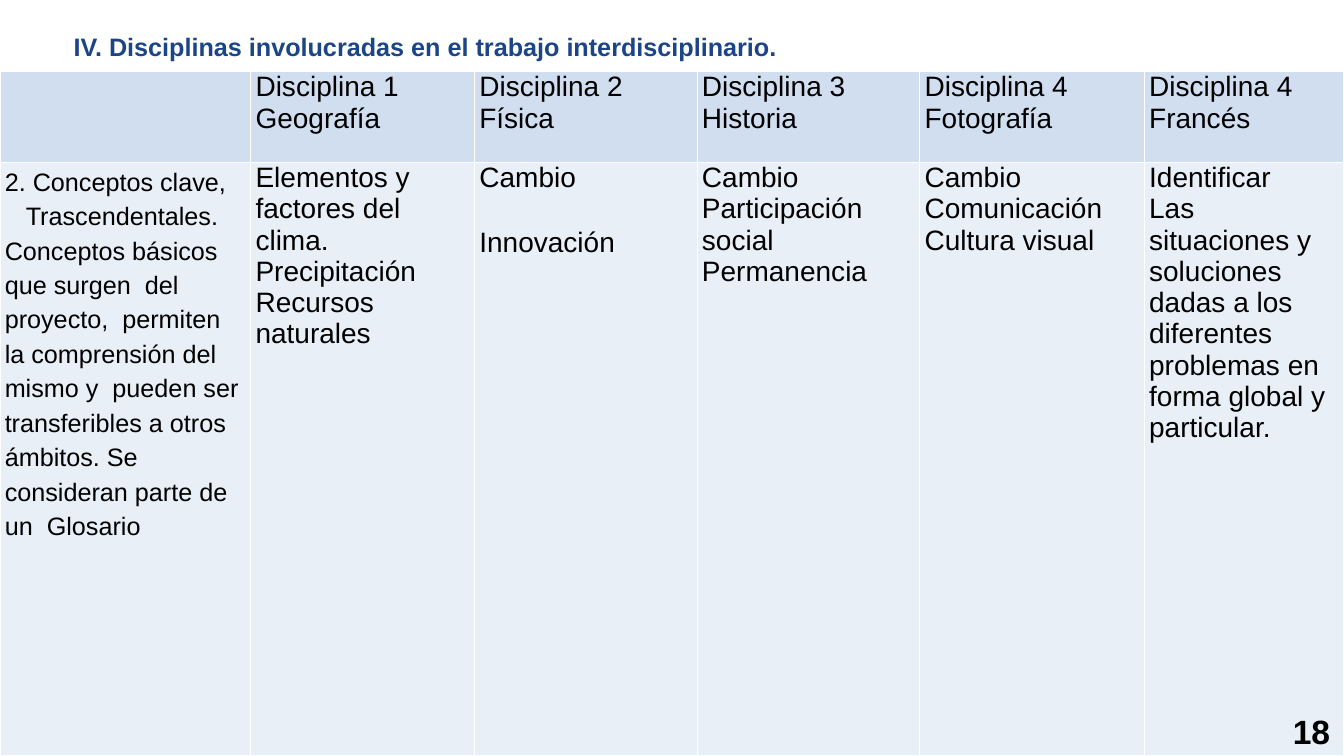
"""Build the slide on the disciplines involved in the interdisciplinary work."""
from dataclasses import dataclass

from lxml import etree
from pptx import Presentation
from pptx import util as u
from pptx.dml.color import RGBColor
from pptx.enum import text
from pptx.oxml import ns

COLORS = {"heading": "1C4587", "ink": "000000", "header": "D0DEEF",
          "body": "E9EFF7", "border": "FFFFFF"}
FONT = "Arial"
COLUMN_WIDTHS = (6.32, 5.64, 5.61, 5.61, 5.66, 5.03)
ROW_HEIGHTS = (2.29, 14.96)


@dataclass(frozen=True)
class Entry:
    """One paragraph of a table cell."""
    words: str
    size: float = 20
    line_spacing: float = 1.0
    before: float = 0
    indent: float = 0


@dataclass(frozen=True)
class Discipline:
    """A discipline with its heading and its key concepts."""
    heading: str
    concepts: tuple[Entry, ...]


KEY_CONCEPTS = (
    Entry("2. Conceptos clave,", 18, 1.22),
    Entry("Trascendentales.", 18, 1.22, indent=0.53),
    Entry("Conceptos básicos que surgen  del proyecto,  permiten la comprensión "
          "del mismo y  pueden ser transferibles a otros ámbitos. Se consideran "
          "parte de un  Glosario", 18, 1.22),
)
DISCIPLINES = (
    Discipline("Disciplina 1 Geografía", (
        Entry("Elementos y factores del clima."), Entry("Precipitación"),
        Entry("Recursos naturales"))),
    Discipline("Disciplina 2 Física", (
        Entry("Cambio"), Entry("Innovación", before=24))),
    Discipline("Disciplina 3 Historia", (
        Entry("Cambio"), Entry("Participación social"), Entry("Permanencia"))),
    Discipline("Disciplina 4 Fotografía", (
        Entry("Cambio"), Entry("Comunicación"), Entry("Cultura visual"))),
    Discipline("Disciplina 4 Francés", (
        Entry("Identificar"),
        Entry("Las situaciones y soluciones dadas a los diferentes problemas "
              "en forma global y particular."))),
)


def style_font(font, size: float, color: str, bold: bool = False) -> None:
    """Apply the slide's typeface with a size, colour and weight."""
    font.name, font.size, font.bold = FONT, u.Pt(size), bold
    font.color.rgb = RGBColor.from_string(COLORS[color])


def write_label(shape, words: str, size: float, color: str,
                box: tuple[float, float, float, float]) -> None:
    """Place a one-line bold label in a shape."""
    shape.left, shape.top, shape.width, shape.height = map(u.Cm, box)
    frame = shape.text_frame
    frame.text = words
    frame.word_wrap = True
    frame.auto_size = text.MSO_AUTO_SIZE.NONE
    paragraph = frame.paragraphs[0]
    paragraph.alignment = text.PP_ALIGN.LEFT
    style_font(paragraph.runs[0].font, size, color, bold=True)


def draw_borders(cell) -> None:
    """Give a cell a thin border on all four sides."""
    properties = cell._tc.get_or_add_tcPr()
    for side in ("lnL", "lnR", "lnT", "lnB"):
        line = etree.SubElement(properties, ns.qn(f"a:{side}"), w=str(u.Pt(1)))
        fill = etree.SubElement(line, ns.qn("a:solidFill"))
        etree.SubElement(fill, ns.qn("a:srgbClr"), val=COLORS["border"])


def fill_cell(cell, entries: tuple[Entry, ...], color: str) -> None:
    """Write the entries into a cell and colour it."""
    draw_borders(cell)
    cell.fill.solid()
    cell.fill.fore_color.rgb = RGBColor.from_string(COLORS[color])
    cell.margin_left = cell.margin_right = u.Cm(0.12)
    cell.margin_top = cell.margin_bottom = 0
    cell.text_frame.text = "\n".join(entry.words for entry in entries)
    for paragraph, entry in zip(cell.text_frame.paragraphs, entries):
        paragraph.line_spacing = entry.line_spacing
        paragraph.space_before = u.Pt(entry.before)
        if entry.indent:
            paragraph._p.get_or_add_pPr().set("marL", str(u.Cm(entry.indent)))
        for run in paragraph.runs:
            style_font(run.font, entry.size, "ink")


def add_disciplines(slide) -> None:
    """Add the table of disciplines and their concepts."""
    grid = slide.shapes.add_table(
        len(ROW_HEIGHTS), len(COLUMN_WIDTHS), 0, u.Cm(1.8),
        u.Cm(sum(COLUMN_WIDTHS)), u.Cm(sum(ROW_HEIGHTS))).table
    grid.first_row = grid.horz_banding = False
    for column, width in zip(grid.columns, COLUMN_WIDTHS):
        column.width = u.Cm(width)
    for row, height in zip(grid.rows, ROW_HEIGHTS):
        row.height = u.Cm(height)
    fill_cell(grid.cell(0, 0), (), "header")
    fill_cell(grid.cell(1, 0), KEY_CONCEPTS, "body")
    for index, discipline in enumerate(DISCIPLINES, start=1):
        fill_cell(grid.cell(0, index), (Entry(discipline.heading),), "header")
        fill_cell(grid.cell(1, index), discipline.concepts, "body")


def main() -> None:
    """Build and save the presentation."""
    deck = Presentation()
    deck.slide_width, deck.slide_height = u.Cm(33.87), u.Cm(19.05)
    slide = deck.slides.add_slide(deck.slide_layouts[5])
    add_disciplines(slide)
    write_label(slide.shapes.title,
                "IV. Disciplinas involucradas en el trabajo interdisciplinario.",
                18, "heading", (1.6, 0.66, 18.47, 1.02))
    page_number = slide.shapes.add_textbox(0, 0, 0, 0)
    write_label(page_number, "18", 24, "ink", (32.33, 17.78, 1.52, 1.27))
    deck.save("out.pptx")


if __name__ == "__main__":
    main()
